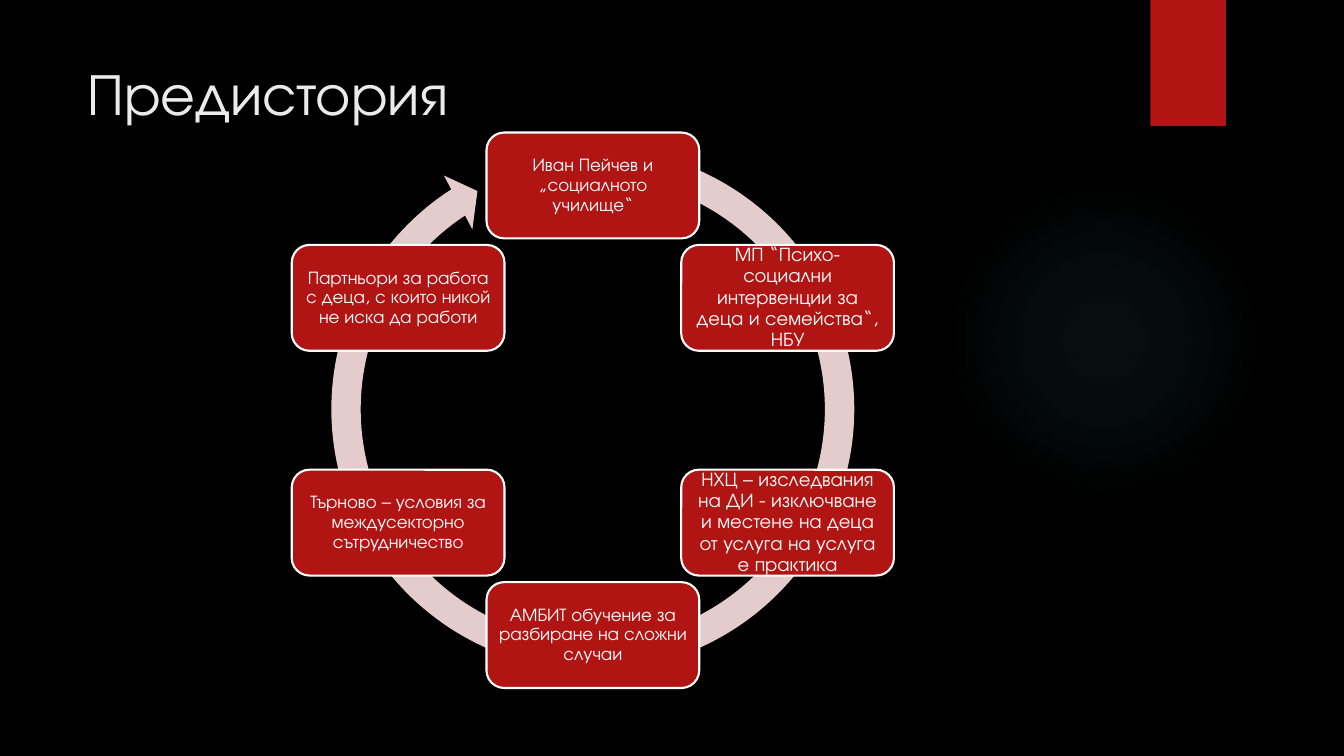
from math import cos, radians, sin

from lxml import etree
from pptx import Presentation
from pptx.dml.color import RGBColor
from pptx.enum.shapes import MSO_SHAPE
from pptx.enum.text import MSO_ANCHOR, PP_ALIGN
from pptx.util import Emu, Pt

PX = 9144
FONT = "TeX Gyre Adventor"
RED, WHITE, PALE, TITLE, GLOW = "B01513", "FFFFFF", "E4CCCC", "EBEBEB", "50B9C1"
RECT, OVAL = MSO_SHAPE.RECTANGLE, MSO_SHAPE.OVAL
ROUND, RING = MSO_SHAPE.ROUNDED_RECTANGLE, MSO_SHAPE.CIRCULAR_ARROW
MIDDLE, CENTER = MSO_ANCHOR.MIDDLE, PP_ALIGN.CENTER
NS = "http://schemas.openxmlformats.org/drawingml/2006/main"
RING_ADJ = (5300, 312600, 14215700, 17134300, 5500)
GLOW_STOPS = ((0, 7), (36, 6), (69, 0))
STEPS = (
    ("Иван Пейчев и „социалното училище“", 13, 5),
    ("МП “Психо-социални интервенции за деца и семейства“, НБУ", 14, 6),
    ("НХЦ – изследвания на ДИ - изключване и местене на деца "
     "от услуга на услуга е практика", 14, 6),
    ("АМБИТ обучение за разбиране на сложни случаи", 13, 5),
    ("Търново – условия за междусекторно сътрудничество", 13, 5),
    ("Партньори за работа с деца, с които никой не иска да работи", 13, 5),
)


def px(n):
    """Turn px into EMU."""
    return Emu(round(n * PX))


def rgb(value):
    """Turn a hex string into a colour."""
    return RGBColor.from_string(value)


def add_shape(slide, kind, box, fill, line=None):
    """Add a filled preset shape, outlined only when a line colour is given."""
    sp = slide.shapes.add_shape(kind, *map(px, box))
    sp.shadow.inherit = False
    sp.fill.solid()
    sp.fill.fore_color.rgb = rgb(fill)
    if line:
        sp.line.color.rgb = rgb(line)
        sp.line.width = Pt(1.5)
    else:
        sp.line.fill.background()
    return sp


def set_text(sp, text, size, color):
    """Write one wrapped, vertically centred paragraph and return it."""
    tf = sp.text_frame
    tf.word_wrap = True
    tf.vertical_anchor = MIDDLE
    tf.text = text
    p = tf.paragraphs[0]
    font = p.runs[0].font
    font.name, font.size, font.color.rgb = FONT, Pt(size), rgb(color)
    return p


def add_glow(slide, box):
    """Add a faint circular glow that fades towards its edge."""
    sp = add_shape(slide, OVAL, box, GLOW)
    stops = "".join(
        f'<a:gs pos="{pos * 1000}"><a:srgbClr val="{GLOW}">'
        f'<a:alpha val="{alpha * 1000}"/></a:srgbClr></a:gs>'
        for pos, alpha in GLOW_STOPS)
    grad = etree.fromstring(
        f'<a:gradFill xmlns:a="{NS}"><a:gsLst>{stops}</a:gsLst>'
        '<a:path path="circle"><a:fillToRect l="50000" t="50000" '
        'r="50000" b="50000"/></a:path></a:gradFill>')
    spPr = sp.element.spPr
    spPr.replace(spPr.find(f"{{{NS}}}solidFill"), grad)


def add_title(slide, box, text):
    """Add the slide title."""
    set_text(slide.shapes.add_textbox(*map(px, box)), text, 42, TITLE)


def add_cycle(slide, box, steps):
    """Add a ring arrow with the steps spaced evenly clockwise from the top."""
    x, y, w, h = box
    ring = add_shape(slide, RING, box, PALE)
    for i, value in enumerate(RING_ADJ):
        ring.adjustments[i] = value / 100000
    node_w, node_h, radius = 211, 105, 223
    cx, cy = x + w / 2, y + h / 2 + 1
    for i, (text, size, inset) in enumerate(steps):
        angle = radians(i * 360 / len(steps))
        left = cx + radius * sin(angle) - node_w / 2
        top = cy - radius * cos(angle) - node_h / 2
        sp = add_shape(slide, ROUND, (left, top, node_w, node_h), RED, WHITE)
        p = set_text(sp, text, size, WHITE)
        p.alignment = CENTER
        p.line_spacing = 0.9
        tf = sp.text_frame
        tf.margin_left = tf.margin_right = px(inset)
        tf.margin_top = tf.margin_bottom = px(inset)


def main():
    """Build and save the slide."""
    prs = Presentation()
    prs.slide_width, prs.slide_height = px(1333), px(750)
    slide = prs.slides.add_slide(prs.slide_layouts[6])
    slide.background.fill.solid()
    slide.background.fill.fore_color.rgb = rgb("000000")
    add_glow(slide, (941, 183, 308, 308))
    add_shape(slide, RECT, (1141, 0, 75, 125), RED)
    add_title(slide, (77, 50, 1022, 82), "Предистория")
    add_cycle(slide, (313, 131, 550, 550), STEPS)
    prs.save("out.pptx")


if __name__ == "__main__":
    main()
